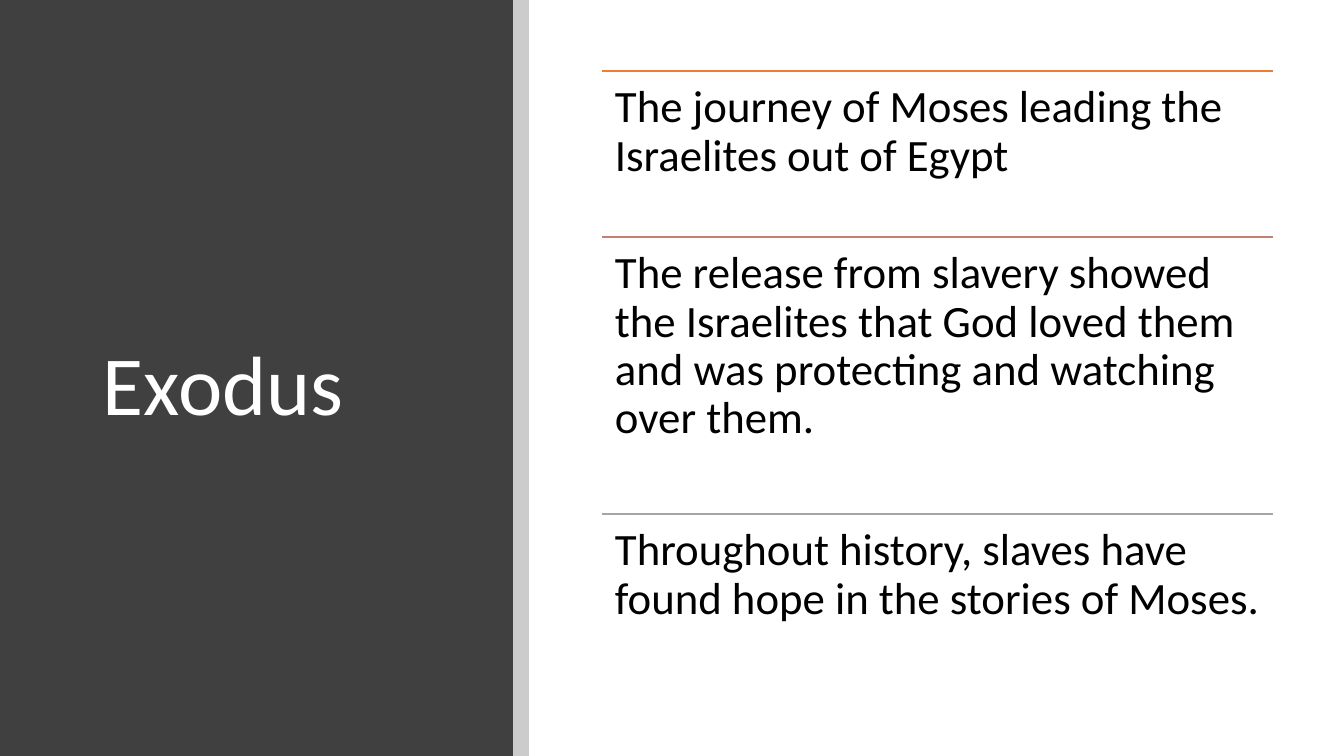
from lxml import etree
from pptx import Presentation
from pptx.dml.color import RGBColor
from pptx.enum.shapes import MSO_CONNECTOR, MSO_SHAPE
from pptx.enum.text import MSO_ANCHOR
from pptx.oxml.ns import qn
from pptx.util import Pt

RECT = MSO_SHAPE.RECTANGLE
STRAIGHT = MSO_CONNECTOR.STRAIGHT
TOP = MSO_ANCHOR.TOP
MIDDLE = MSO_ANCHOR.MIDDLE

EMU_PER_PX = 914400 / 100.8
SLIDE_W, SLIDE_H = 1344, 756
PANEL_W, STRIP_W = 513, 16
LIST_X, LIST_W = 602, 671

POINTS = [
    (71, 166, "ED7D31", "The journey of Moses leading the Israelites out of Egypt"),
    (237, 277, "C48170", "The release from slavery showed the Israelites that God loved them "
                         "and was protecting and watching over them."),
    (514, 171, "A5A5A5", "Throughout history, slaves have found hope in the stories of Moses."),
]


def px(n):
    return round(n * EMU_PER_PX)


def rgb(value):
    return RGBColor.from_string(value)


class Deck:
    font = "Calibri"

    def __init__(self, prs):
        self.slide = prs.slides.add_slide(prs.slide_layouts[6])

    def rect(self, x, y, w, h, color, alpha=100):
        sp = self.slide.shapes.add_shape(RECT, px(x), px(y), px(w), px(h))
        sp.shadow.inherit = False
        sp.fill.solid()
        sp.fill.fore_color.rgb = rgb(color)
        sp.line.fill.background()
        if alpha < 100:
            clr = sp.fill._xPr.find(qn("a:solidFill"))[0]
            etree.SubElement(clr, qn("a:alpha")).set("val", str(alpha * 1000))

    def rule(self, x, y, w, color):
        line = self.slide.shapes.add_connector(STRAIGHT, px(x), px(y), px(x + w), px(y))
        line.line.color.rgb = rgb(color)
        line.line.width = Pt(1)
        etree.SubElement(line._element.spPr, qn("a:effectLst"))

    def text(self, x, y, w, h, text, size, color, anchor=TOP, inset=13):
        tf = self.slide.shapes.add_textbox(px(x), px(y), px(w), px(h)).text_frame
        tf.word_wrap = True
        tf.vertical_anchor = anchor
        tf.margin_left = tf.margin_right = tf.margin_top = tf.margin_bottom = px(inset)
        p = tf.paragraphs[0]
        p.text = text
        p.line_spacing = 0.9
        p.font.name = self.font
        p.font.size = Pt(size)
        p.font.color.rgb = rgb(color)


def main():
    prs = Presentation()
    prs.slide_width, prs.slide_height = px(SLIDE_W), px(SLIDE_H)
    deck = Deck(prs)
    deck.rect(0, 0, PANEL_W, SLIDE_H, "404040")
    deck.text(93, 90, 368, 596, "Exodus", 60, "FFFFFF", MIDDLE, 10)
    deck.rect(PANEL_W, 0, STRIP_W, SLIDE_H, "000000", alpha=20)
    for y, h, color, text in POINTS:
        deck.rule(LIST_X, y, LIST_W, color)
        deck.text(LIST_X, y, LIST_W, h, text, 32, "000000")
    prs.save("out.pptx")


if __name__ == "__main__":
    main()
